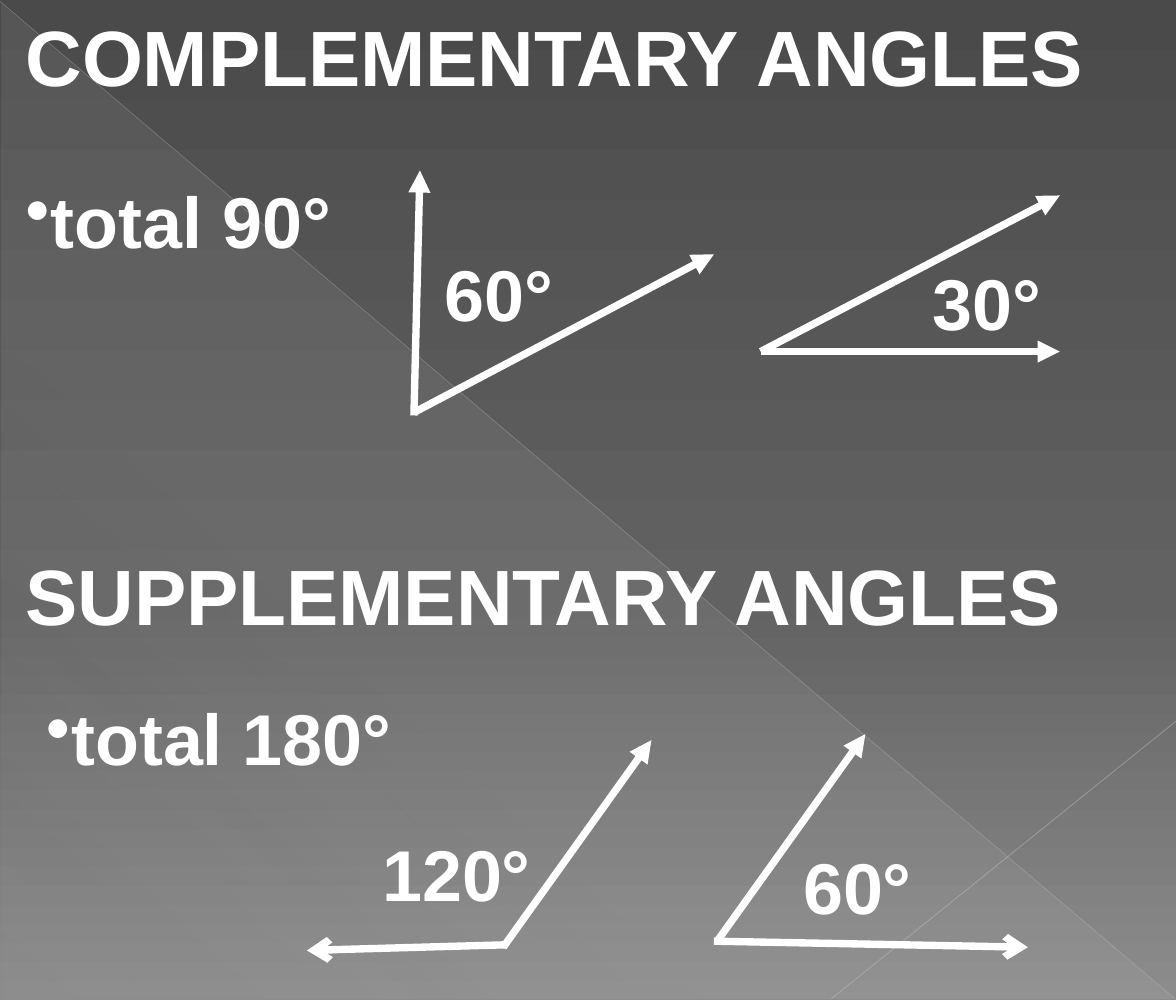
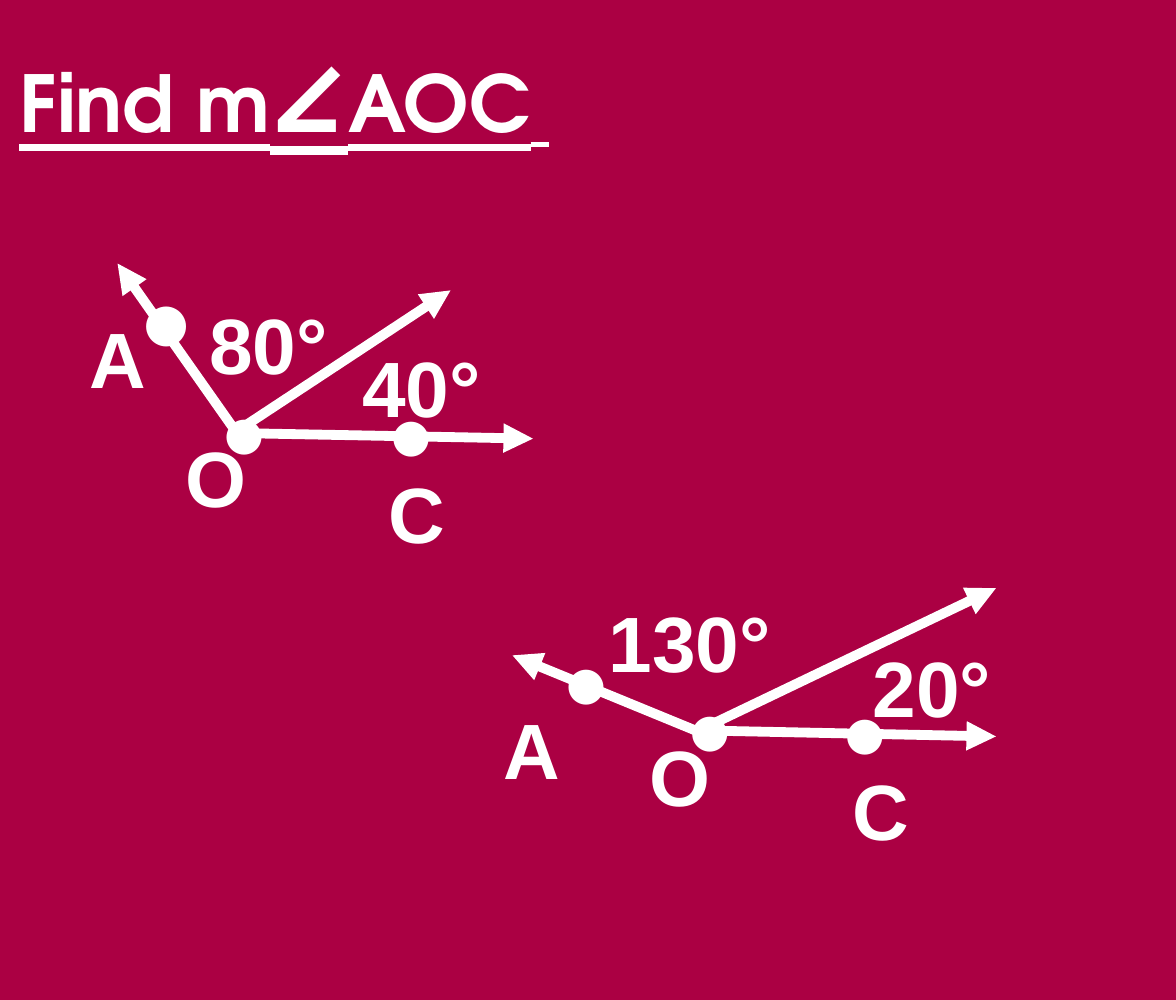
from lxml.etree import SubElement
from pptx import Presentation
from pptx.dml.color import RGBColor
from pptx.enum.shapes import MSO_CONNECTOR as LineKind, MSO_SHAPE as Preset
from pptx.enum.text import PP_ALIGN as Align
from pptx.oxml.ns import qn
from pptx.util import Cm, Pt

COLORS = {"ink": "FFFFFF", "crimson": "AB0043", "veil": "D2D2D2",
          "diagonal": "BFBFBF", "corner": "C6C6C6",
          "top": "4A4A4A", "middle": "626262", "bottom": "8C8C8C"}


def add_line(shapes, start, end, width, color="ink", head=None, opacity=100):
    line = shapes.add_connector(LineKind.STRAIGHT, *map(Cm, start + end))
    line.line.width = Pt(width)
    line.line.color.rgb = RGBColor.from_string(COLORS[color])
    properties = line.element.spPr
    if opacity < 100:
        SubElement(properties.find(".//" + qn("a:srgbClr")), qn("a:alpha"), val=str(opacity * 1000))
    if head:
        SubElement(properties.find(qn("a:ln")), qn("a:tailEnd"), type=head)
    SubElement(properties, qn("a:effectLst"))


def add_text(shapes, text, left, top, width, height, size, align=Align.CENTER, font="Arial", bold=True):
    box = shapes.add_textbox(Cm(left), Cm(top), Cm(width), Cm(height))
    box.text_frame.word_wrap = False
    para = box.text_frame.paragraphs[0]
    para.text = text
    para.alignment = align
    para.font.name, para.font.size, para.font.bold = font, Pt(size), bold
    para.font.color.rgb = RGBColor.from_string(COLORS["ink"])
    return box


deck = Presentation()
deck.slide_width, deck.slide_height = Cm(25.4), Cm(21.59)
blank = deck.slide_layouts[6]

# Slide 1: gradient background with a translucent triangle
page = deck.slides.add_slide(blank)
page.background.fill.gradient()
background = page.element.find(".//" + qn("a:gradFill"))
veil = page.shapes.add_shape(Preset.RIGHT_TRIANGLE, Cm(0.03), Cm(0.05), Cm(25.37), Cm(21.51))
veil.shadow.inherit = False
veil.line.fill.background()
veil.fill.gradient()
gradients = [
    (background, 90, [(0, "top", 100), (60, "middle", 100), (100, "bottom", 100)]),
    (veil.element.find(".//" + qn("a:gradFill")), 133,
     [(0, "veil", 10), (70, "veil", 8), (100, "veil", 1)]),
]
for gradient, angle, stops in gradients:
    for child in list(gradient):
        gradient.remove(child)
    stop_list = SubElement(gradient, qn("a:gsLst"))
    for position, color, opacity in stops:
        stop = SubElement(stop_list, qn("a:gs"), pos=str(position * 1000))
        shade = SubElement(stop, qn("a:srgbClr"), val=COLORS[color])
        SubElement(shade, qn("a:alpha"), val=str(opacity * 1000))
    SubElement(gradient, qn("a:lin"), ang=str(angle * 60000), scaled="0")
add_line(page.shapes, (0, 0.03), (25.37, 21.56), 0.39, "diagonal", opacity=35)
add_line(page.shapes, (25.4, 15.57), (17.96, 21.56), 0.47, "corner", opacity=45)

# Angle pairs: bullet, rays, degree labels
pairs = [
    (("total 90°", 0.3, 3.68, 7.19),
     [((8.94, 8.97), (9.07, 3.68), "triangle"), ((8.97, 8.89), (15.42, 5.49), "triangle"),
      ((16.43, 7.59), (22.89, 7.59), "triangle"), ((16.43, 7.59), (22.89, 4.22), "triangle")],
     [("60°", 9.32, 5.26, 2.9), ("30°", 19.86, 5.46, 2.9)]),
    (("total 180°", 0.74, 14.86, 8.05),
     [((10.9, 20.4), (6.63, 20.52), "arrow"), ((10.87, 20.45), (14.07, 15.98), "triangle"),
      ((15.49, 20.32), (18.69, 15.85), "triangle"), ((15.42, 20.32), (22.2, 20.45), "arrow")],
     [("120°", 7.98, 17.78, 3.76), ("60°", 17.07, 18.06, 2.9)]),
]
for total, rays, labels in pairs:
    group = page.shapes.add_group_shape().shapes
    bullet = add_text(group, *total, 2.13, 44, Align.LEFT)
    SubElement(bullet.text_frame.paragraphs[0]._p.get_or_add_pPr(), qn("a:buChar"), char="•")
    # Bullet marks precede the default run properties in the schema
    properties = bullet.text_frame.paragraphs[0]._p.pPr
    properties.insert(0, properties[-1])
    for start, end, head in rays:
        add_line(group, start, end, 4.5, head=head)
    for label in labels:
        add_text(group, *label, 2.13, 44)

# Headings
for heading, top, width in [("COMPLEMENTARY ANGLES", 0.05, 23.65), ("SUPPLEMENTARY ANGLES", 11.68, 23.19)]:
    add_text(page.shapes, heading, 0.3, top, width, 2.29, 48, Align.LEFT)

# Slide 2: question
page = deck.slides.add_slide(blank)
page.background.fill.solid()
page.background.fill.fore_color.rgb = RGBColor.from_string(COLORS["crimson"])
question = add_text(page.shapes, "", 0, 0.61, 24.03, 13.39, 48, Align.LEFT, "TeX Gyre Adventor")
question.text_frame.word_wrap = True
para = question.text_frame.paragraphs[0]
para.space_before = Pt(10)
para.font.underline = True
para._p.pPr.set("marL", str(Cm(1.24)))
para._p.pPr.set("indent", str(Cm(-1.07)))
for text, size in [("Find m", 48), ("∠", 60), ("AOC", 48), (" ", 40)]:
    span = para.add_run()
    span.text = text
    span.font.size = Pt(size)

# Figures: rays, point names, degree labels, dots
figures = [
    ([((5.13, 9.37), (2.54, 5.69)), ((5.13, 9.35), (11.51, 9.47)), ((5.13, 9.3), (9.73, 6.27))],
     [("A", 1.68, 6.58, 1.65), ("O", 3.76, 9.14, 1.78), ("C", 8.15, 9.91, 1.65),
      ("80°", 3.78, 6.27, 4.04), ("40°", 6.73, 7.19, 4.75)],
     [(4.57, 8.59, 28), (2.79, 6.1, 32), (8.18, 8.64, 28)]),
    ([((15.14, 15.82), (11.07, 14.15)), ((15.14, 15.77), (21.51, 15.9)), ((15.14, 15.75), (21.51, 12.7))],
     [("A", 10.62, 15.01, 1.65), ("O", 13.77, 15.6, 1.78), ("C", 18.16, 16.33, 1.65),
      ("130°", 12.88, 12.7, 4.04), ("20°", 17.75, 13.67, 4.75)],
     [(11.96, 14, 28), (14.63, 15.01, 28), (17.98, 15.06, 28)]),
]
for rays, labels, dots in figures:
    group = page.shapes.add_group_shape().shapes
    for start, end in rays:
        add_line(group, start, end, 6, head="triangle")
    for label in labels:
        add_text(group, *label, 2.31, 48)
    for left, top, size in dots:
        add_text(group, "●", left, top, size * 0.05, size * 0.05, size, font="Cabin", bold=False)

deck.save("out.pptx")
